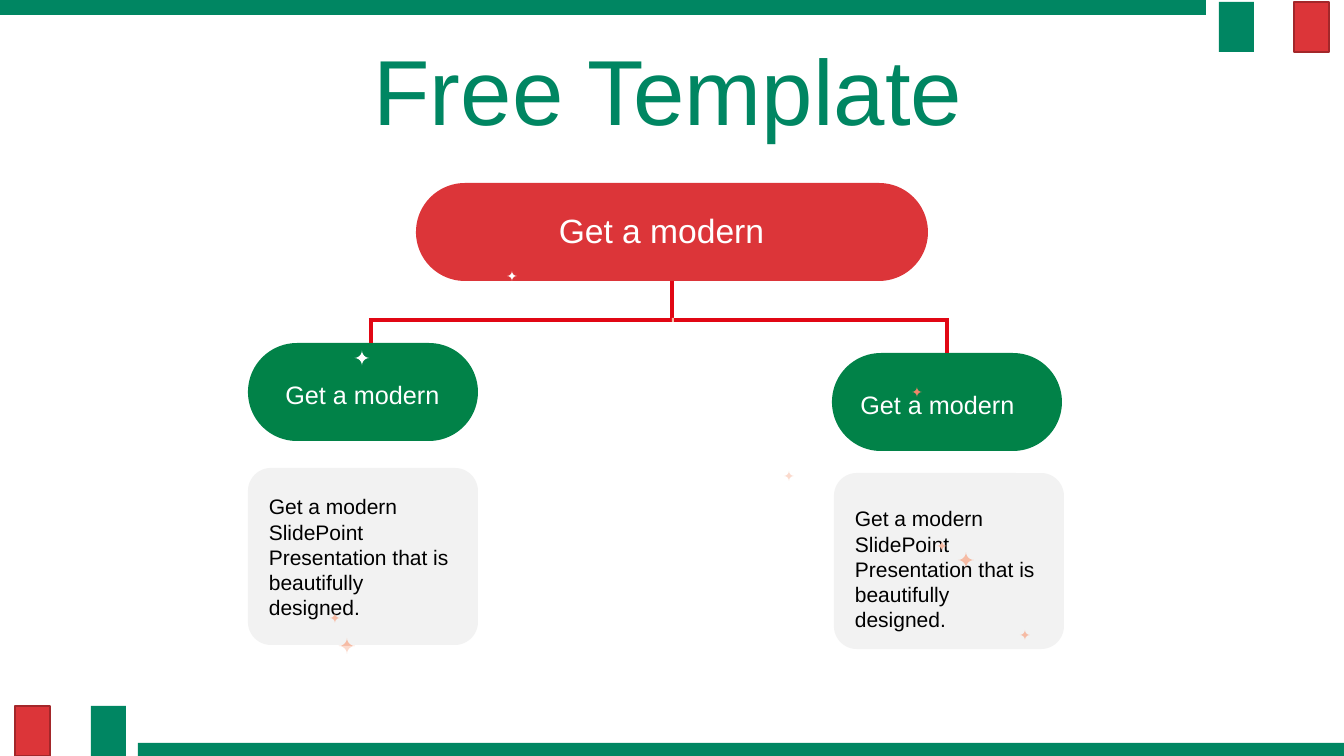
import math
from pptx import Presentation
from pptx.dml.color import RGBColor
from pptx.enum.shapes import MSO_CONNECTOR, MSO_SHAPE
from pptx.enum.text import MSO_ANCHOR, MSO_AUTO_SIZE, PP_ALIGN
from pptx.oxml.ns import qn
from pptx.util import Pt
from lxml import etree

RECTANGLE = MSO_SHAPE.RECTANGLE
ROUNDED = MSO_SHAPE.ROUNDED_RECTANGLE
STRAIGHT = MSO_CONNECTOR.STRAIGHT
CENTER, LEFT = PP_ALIGN.CENTER, PP_ALIGN.LEFT
TOP, MIDDLE = MSO_ANCHOR.TOP, MSO_ANCHOR.MIDDLE
FIT_SHAPE = MSO_AUTO_SIZE.SHAPE_TO_FIT_TEXT

EMU_PER_PX = 914400 / 100.8
WIDTH, HEIGHT = 1344, 756
FONT = "Arial"
TEAL, RED, RED_EDGE = "008662", "DC3539", "A3272A"
GREEN, GREY, LINE_RED = "018248", "F2F2F2", "E10714"
WHITE, BLACK = "FFFFFF", "000000"
CORAL, PEACH, PALE = "EF8769", "F6BBA4", "FBDACD"
LABEL = "Get a modern"
DETAIL = "Get a modern SlidePoint Presentation that is beautifully designed."
TOP_SIDE, BOTTOM_SIDE = 0, 2
UPPER, LOWER = (3, 0), (1, 2)


def px(length):
    return round(length * EMU_PER_PX)


def color(value):
    return RGBColor.from_string(value)


def paint(shape, fill, edge=None):
    shape.shadow.inherit = False
    shape.fill.solid()
    shape.fill.fore_color.rgb = color(fill)
    if edge:
        shape.line.color.rgb = color(edge)
        shape.line.width = Pt(1)
    else:
        shape.line.fill.background()


def add_block(slide, kind, box, fill, edge=None, radius=None):
    shape = slide.shapes.add_shape(kind, *map(px, box))
    paint(shape, fill, edge)
    if radius is not None:
        shape.adjustments[0] = radius
    return shape


def add_text(slide, box, text, size, fill, align=LEFT):
    text_box = slide.shapes.add_textbox(*map(px, box))
    frame = text_box.text_frame
    frame.word_wrap = True
    frame.auto_size = FIT_SHAPE
    frame.vertical_anchor = TOP
    paragraph = frame.paragraphs[0]
    paragraph.alignment = align
    run = paragraph.add_run()
    run.text = text
    run.font.name = FONT
    run.font.size = Pt(size)
    run.font.color.rgb = color(fill)
    return text_box


def add_line(slide, start, end):
    connector = slide.shapes.add_connector(STRAIGHT, *map(px, start + end))
    connector.line.color.rgb = color(LINE_RED)
    connector.line.width = px(4)
    etree.SubElement(connector._element.spPr, qn("a:effectLst"))
    return connector


def add_sparkle(slide, center_x, center_y, size, fill, quarters=range(4)):
    radius = size / 2
    points = []
    for quarter in quarters:
        corner = math.radians(90 * quarter - 45)
        corner_x = center_x + radius * math.sqrt(2) * math.cos(corner)
        corner_y = center_y + radius * math.sqrt(2) * math.sin(corner)
        for step in range(7):
            angle = math.radians(90 * quarter + 180 - 15 * step)
            points.append((px(corner_x + radius * math.cos(angle)),
                           px(corner_y + radius * math.sin(angle))))
    builder = slide.shapes.build_freeform(*points[0])
    builder.add_line_segments(points[1:], close=True)
    paint(builder.convert_to_shape(), fill)


def add_frame(slide):
    add_block(slide, RECTANGLE, (0, 0, 1206, 15), TEAL)
    add_block(slide, RECTANGLE, (138, 743, 1206, 13), TEAL)
    for red_left, green_left, top in ((15, 91, 706), (1294, 1219, 2)):
        add_block(slide, RECTANGLE, (red_left, top, 35, 50), RED, RED_EDGE)
        add_block(slide, RECTANGLE, (green_left, top, 35, 50), TEAL)


def add_title(slide, box):
    title = add_text(slide, box, "Free Template", 66, TEAL, CENTER)
    title.text_frame.auto_size = MSO_AUTO_SIZE.NONE
    title.text_frame.vertical_anchor = MIDDLE
    paragraph = title.text_frame.paragraphs[0]
    paragraph.line_spacing = 0.9
    paragraph.space_before = Pt(10)


def add_pill(slide, box, fill):
    return add_block(slide, ROUNDED, box, fill, radius=0.5)


def add_card(slide, box, text_top):
    left, top, width, height = box
    add_block(slide, ROUNDED, box, GREY, radius=0.13)
    add_text(slide, (left + 11, top + text_top, 207, 112), DETAIL, 15, BLACK)


def add_tree(slide):
    root = add_pill(slide, (416, 183, 512, 98), RED)
    add_pill(slide, (248, 343, 230, 98), GREEN)
    right = add_pill(slide, (832, 353, 230, 98), GREEN)
    stem = add_line(slide, (672, 281), (672, 320))
    stem.begin_connect(root, BOTTOM_SIDE)
    add_line(slide, (369, 320), (949, 320))
    add_line(slide, (371, 320), (371, 343))
    drop = add_line(slide, (947, 320), (947, 353))
    drop.end_connect(right, TOP_SIDE)
    add_block(slide, RECTANGLE, (672, 318, 2, 4), PEACH)
    add_card(slide, (248, 468, 230, 177), 21)
    add_card(slide, (834, 473, 230, 176), 28)


def add_sparkles(slide):
    for sparkle in ((512, 276, 10, WHITE), (362, 358, 15, WHITE),
                    (917, 392, 10, CORAL), (789, 476, 10, PALE),
                    (335, 618, 10, PEACH), (966, 560, 16, PEACH),
                    (1025, 635, 10, PEACH), (942, 546, 10, PEACH),
                    (347, 646, 16, PEACH, UPPER),
                    (347, 646, 16, PALE, LOWER)):
        add_sparkle(slide, *sparkle)


def add_labels(slide):
    for box, size in (((274, 374, 177, 40), 18),
                      ((849, 384, 177, 40), 18),
                      ((537, 205, 249, 50), 24)):
        add_text(slide, box, LABEL, size, WHITE, CENTER)


def main():
    presentation = Presentation()
    presentation.slide_width = px(WIDTH)
    presentation.slide_height = px(HEIGHT)
    slide = presentation.slides.add_slide(presentation.slide_layouts[6])
    add_frame(slide)
    add_title(slide, (87, 56, 1162, 80))
    add_tree(slide)
    add_sparkles(slide)
    add_labels(slide)
    presentation.save("out.pptx")


if __name__ == "__main__":
    main()
